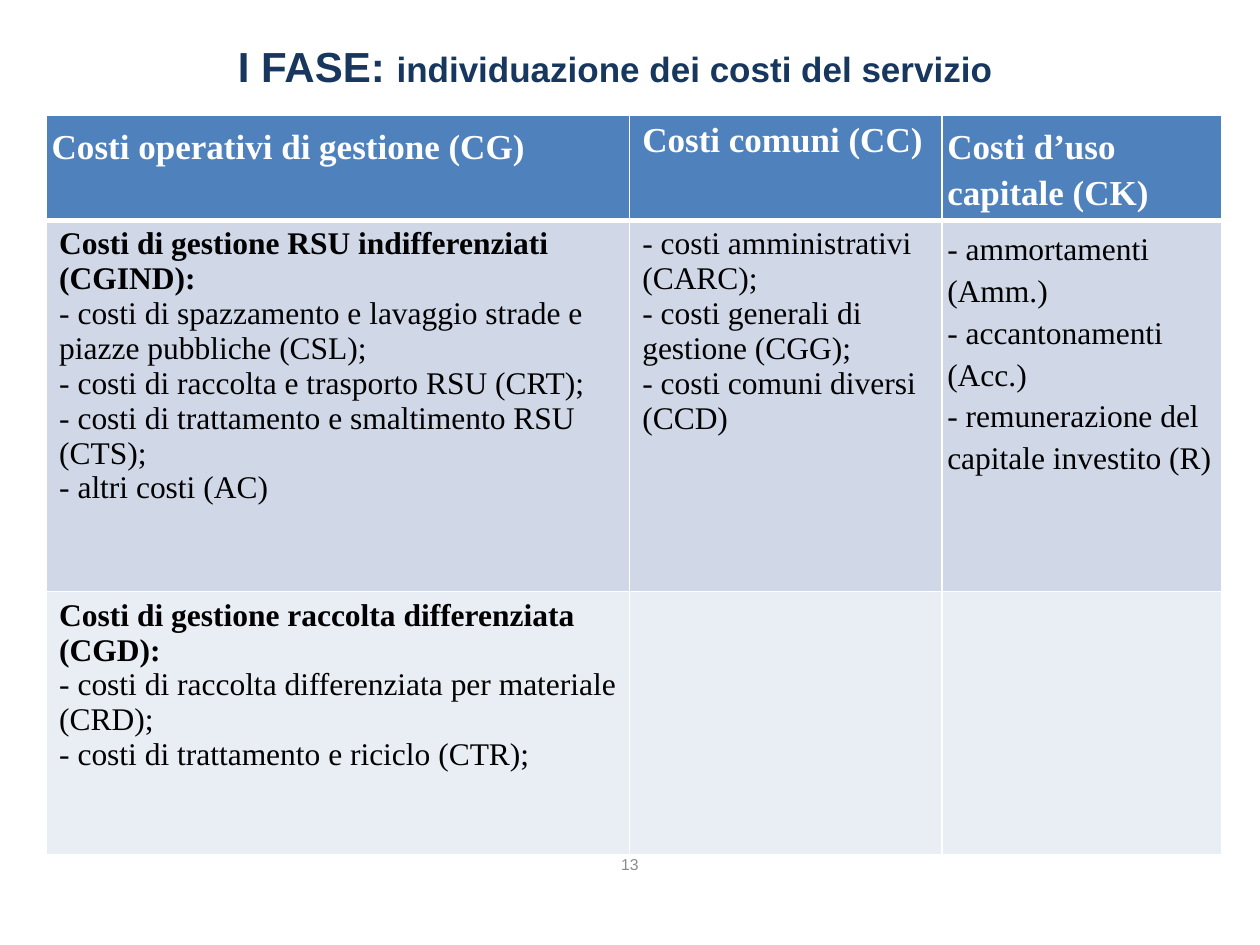
import pptx
import pptx.util
import pptx.dml.color
import pptx.enum.text
import pptx.oxml
from dataclasses import dataclass
from lxml import etree

Pt = pptx.util.Pt
RGB = pptx.dml.color.RGBColor.from_string
ALIGN = pptx.enum.text.PP_ALIGN
ANCHOR = pptx.enum.text.MSO_ANCHOR


@dataclass(frozen=True)
class Theme:
    sans: str = "Arial"
    serif: str = "Times New Roman"
    title: str = "17375E"
    white: str = "FFFFFF"
    black: str = "000000"
    grey: str = "8C8C8C"
    row_fills: tuple = ("4F81BD", "D0D8E8", "E9EDF4")
    title_size: int = 24
    subtitle_size: int = 20
    header_size: int = 20
    body_size: int = 18
    number_size: int = 9


theme = Theme()


def style(font, name, size, color, bold=False):
    font.name = name
    font.size = Pt(size)
    font.color.rgb = RGB(color)
    font.bold = bold


def set_borders(cell, bottom):
    """White 1 pt edges, with a bottom edge of the given width."""
    tc_pr = cell._tc.get_or_add_tcPr()
    ns = "{http://schemas.openxmlformats.org/drawingml/2006/main}"
    for edge, width in (("L", 1), ("R", 1), ("T", 1), ("B", bottom)):
        ln = etree.SubElement(tc_pr, ns + "ln" + edge, w=str(Pt(width)))
        fill = etree.SubElement(ln, ns + "solidFill")
        etree.SubElement(fill, ns + "srgbClr", val=theme.white)


prs = pptx.Presentation()
prs.slide_width, prs.slide_height = Pt(720), Pt(540)
s = prs.slides.add_slide(prs.slide_layouts[5])

# Title
title = s.shapes.title
title.left, title.top, title.width, title.height = Pt(26.64), Pt(16.5), Pt(650), Pt(39.6)
tf = title.text_frame
tf.margin_left = tf.margin_right = tf.margin_top = tf.margin_bottom = 0
tf.vertical_anchor = ANCHOR.MIDDLE
tf.word_wrap = True
p = tf.paragraphs[0]
p.alignment = ALIGN.CENTER
p.line_spacing = Pt(31)
for text, size in (("I FASE: ", theme.title_size),
                   ("individuazione dei costi del servizio", theme.subtitle_size)):
    r = p.add_run()
    r.text = text
    style(r.font, theme.sans, size, theme.title, True)

# Cost table: one list of paragraphs per cell
rows = [
    [["Costi operativi di gestione (CG)"],
     ["Costi comuni (CC)"],
     ["Costi d’uso capitale (CK)"]],
    [["Costi di gestione RSU indifferenziati (CGIND):",
      "- costi di spazzamento e lavaggio strade e piazze pubbliche (CSL);",
      "- costi di raccolta e trasporto RSU (CRT);",
      "- costi di trattamento e smaltimento RSU (CTS);",
      "- altri costi (AC)"],
     ["- costi amministrativi (CARC);",
      "- costi generali di gestione (CGG);",
      "- costi comuni diversi (CCD)"],
     ["- ammortamenti (Amm.)",
      "- accantonamenti (Acc.)",
      "- remunerazione del capitale investito (R)"]],
    [["Costi di gestione raccolta differenziata (CGD):",
      "- costi di raccolta differenziata per materiale (CRD);",
      "- costi di trattamento e riciclo (CTR);"],
     [], []],
]
col_widths = (333.2, 178.6, 159.8)
row_heights = (60.2, 212.2, 150.4)
spaced_cells = {(0, 0), (0, 2), (1, 2)}  # tight margins, open line spacing

table = s.shapes.add_table(3, 3, Pt(26.64), Pt(65.8),
                           Pt(sum(col_widths)), Pt(sum(row_heights))).table
for column, width in zip(table.columns, col_widths):
    column.width = Pt(width)
for i, (row, height) in enumerate(zip(rows, row_heights)):
    table.rows[i].height = Pt(height)
    header = i == 0
    for j, lines in enumerate(row):
        cell = table.cell(i, j)
        set_borders(cell, 3 if header else 1)
        cell.fill.solid()
        cell.fill.fore_color.rgb = RGB(theme.row_fills[i])
        spaced = (i, j) in spaced_cells
        if spaced:
            cell.margin_left = cell.margin_right = Pt(2.9)
            cell.margin_top = cell.margin_bottom = Pt(2.9)
        cell.text_frame.text = "\n".join(lines)
        for p in cell.text_frame.paragraphs:
            if spaced:
                p.line_spacing = 1.2
            for r in p.runs:
                style(r.font, theme.serif,
                      theme.header_size if header else theme.body_size,
                      theme.white if header else theme.black,
                      header or not r.text.startswith("-"))

# Page number
number = s.shapes.add_textbox(Pt(313.2), Pt(479.5), Pt(93.6), Pt(28.8))
tf = number.text_frame
tf.word_wrap = True
tf.vertical_anchor = ANCHOR.MIDDLE
tf.text = "13"
p = tf.paragraphs[0]
p.alignment = ALIGN.CENTER
style(p.runs[0].font, theme.sans, theme.number_size, theme.grey)

prs.save("out.pptx")
